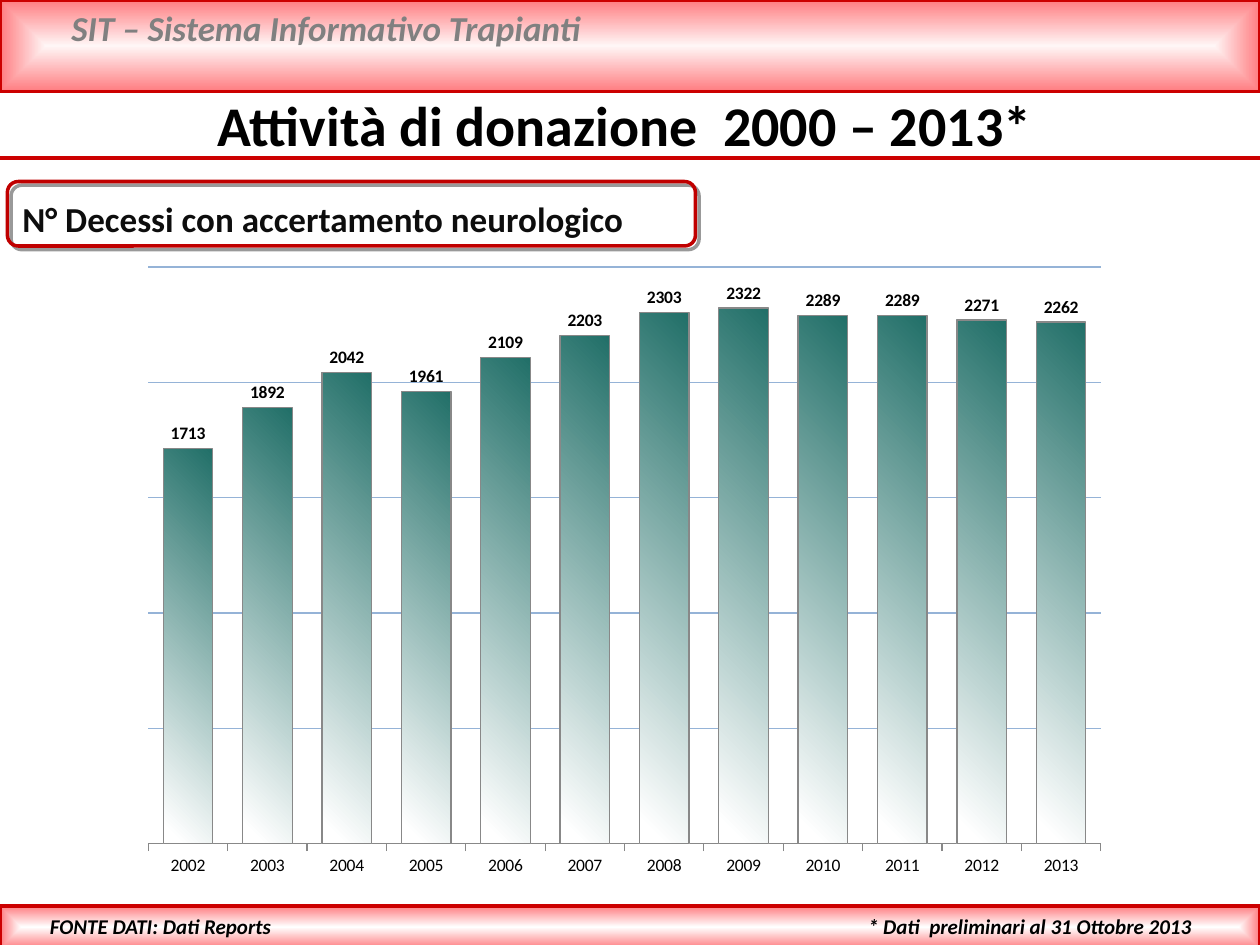
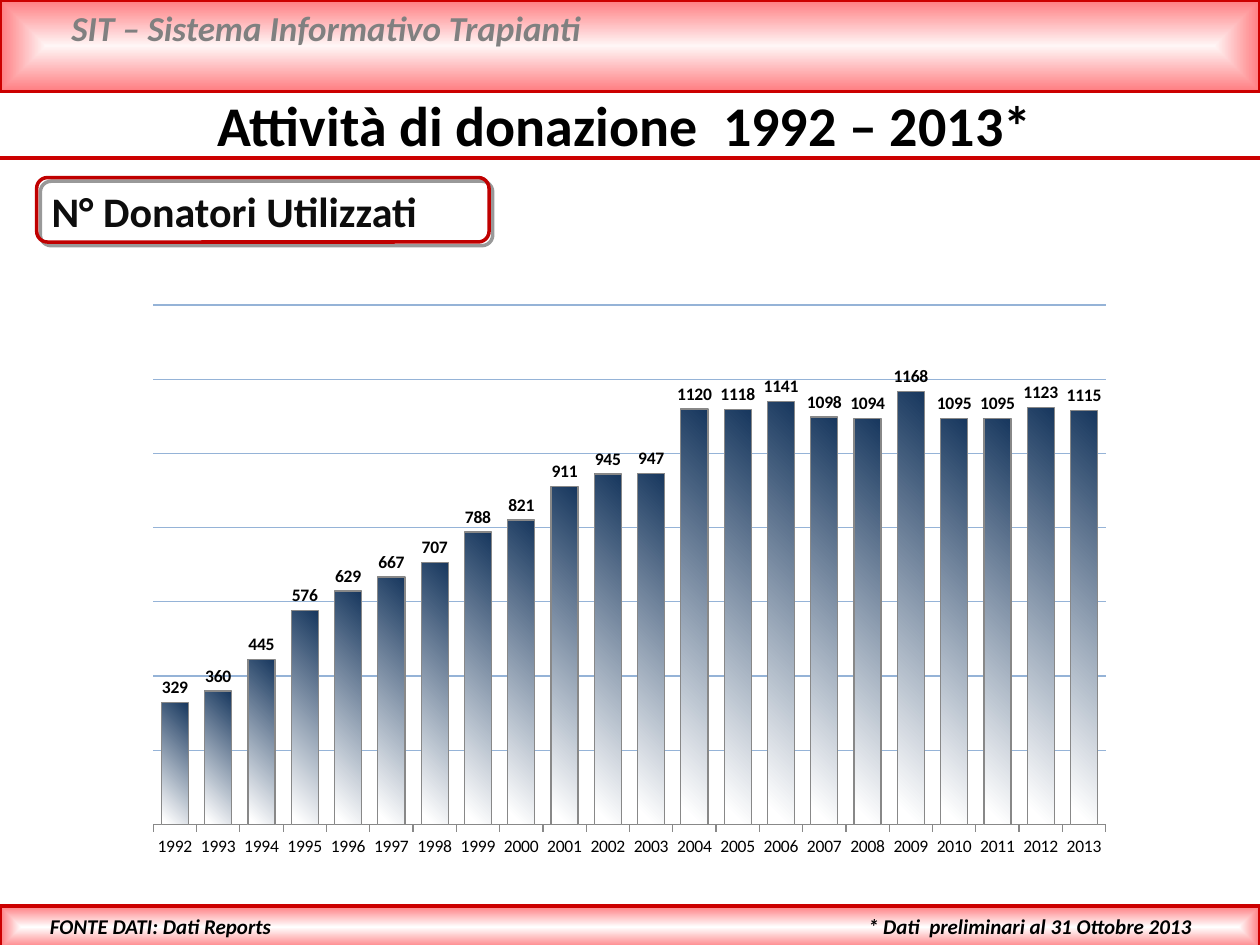
from lxml import etree
from pptx import Presentation
from pptx.chart.data import CategoryChartData
from pptx.dml.color import RGBColor
from pptx.enum.chart import XL_CHART_TYPE, XL_LABEL_POSITION, XL_TICK_LABEL_POSITION, XL_TICK_MARK
from pptx.enum.shapes import MSO_CONNECTOR, MSO_SHAPE
from pptx.enum.text import MSO_ANCHOR, MSO_AUTO_SIZE, PP_ALIGN
from pptx.oxml import parse_xml
from pptx.oxml.ns import qn
from pptx.util import Cm, Pt

COLUMN = XL_CHART_TYPE.COLUMN_CLUSTERED
ABOVE = XL_LABEL_POSITION.OUTSIDE_END
LOW = XL_TICK_LABEL_POSITION.LOW
OUT, NO_TICK = XL_TICK_MARK.OUTSIDE, XL_TICK_MARK.NONE
RECT, ROUND = MSO_SHAPE.RECTANGLE, MSO_SHAPE.ROUNDED_RECTANGLE
STRAIGHT = MSO_CONNECTOR.STRAIGHT
TOP, BOTTOM = MSO_ANCHOR.TOP, MSO_ANCHOR.BOTTOM
LEFT, CENTER, RIGHT = PP_ALIGN.LEFT, PP_ALIGN.CENTER, PP_ALIGN.RIGHT
FIXED = MSO_AUTO_SIZE.NONE

FONT = "Calibri"
BLACK, WHITE, GREY, INK = "000000", "FFFFFF", "808080", "0D0D0D"
RED, FRAME, PINK, PALE = "CC0000", "C00000", "FF7C80", "FFF6F6"
GRID, EDGE = "95B3D7", "888888"
GREEN, NAVY = "216F68", "17375E"
WIDE, HIGH = 25.4, 19.05
A_NS = 'xmlns:a="http://schemas.openxmlformats.org/drawingml/2006/main"'

DEATHS = [1713, 1892, 2042, 1961, 2109, 2203, 2303, 2322, 2289, 2289, 2271, 2262]
DONORS = [329, 360, 445, 576, 629, 667, 707, 788, 821, 911, 945, 947,
          1120, 1118, 1141, 1098, 1094, 1168, 1095, 1095, 1123, 1115]


def color(code):
    return RGBColor.from_string(code)


def place(box):
    return [Cm(side) for side in box]


def stroke(line, code, width):
    line.color.rgb = color(code)
    line.width = Pt(width)


def blend(fill, first, last, end=1.0):
    """Fill with a gradient of two colours, the last one reached at end."""
    fill.gradient()
    for stop, code, spot in zip(fill.gradient_stops, (first, last), (0, end)):
        stop.color.rgb = color(code)
        stop.position = spot


def write(shape, text, size, code=BLACK, align=LEFT, italic=False, anchor=TOP):
    frame = shape.text_frame
    frame.text = text
    frame.word_wrap = True
    frame.auto_size = FIXED
    frame.vertical_anchor = anchor
    frame.margin_left = frame.margin_right = Cm(0.25)
    frame.margin_top = frame.margin_bottom = Cm(0.13)
    para = frame.paragraphs[0]
    para.alignment = align
    font = para.runs[0].font
    font.name, font.size = FONT, Pt(size)
    font.bold, font.italic = True, italic
    font.color.rgb = color(code)


def label(slide, box, text, size, **look):
    write(slide.shapes.add_textbox(*place(box)), text, size, **look)


def band(slide, top, height, core):
    """Full-width bar that shades from its core to pink edges."""
    bar = slide.shapes.add_shape(RECT, *place((0, top, WIDE, height)))
    bar.shadow.inherit = False
    blend(bar.fill, core, PINK)
    grad = bar._element.spPr.find(qn("a:gradFill"))
    grad.replace(grad.find(qn("a:lin")), parse_xml(
        f'<a:path {A_NS} path="shape">'
        '<a:fillToRect l="50000" t="50000" r="50000" b="50000"/></a:path>'))
    stroke(bar.line, RED, 2)


def rule(slide, top):
    line = slide.shapes.add_connector(STRAIGHT, *place((0, top, WIDE, top)))
    stroke(line.line, RED, 2)
    etree.SubElement(line._element.spPr, qn("a:effectLst"))


def plaque(slide, left, top, width, text, size):
    """Rounded outline with a hard shadow around a caption."""
    height = 1.3
    label(slide, (left + 0.05, top, width, height), text, size, code=INK, anchor=BOTTOM)
    frame = slide.shapes.add_shape(ROUND, *place((left, top, width, height)))
    frame.adjustments[0] = 0.167
    frame.fill.background()
    stroke(frame.line, FRAME, 2)
    frame.shadow.inherit = False
    frame._element.spPr.find(qn("a:effectLst")).append(parse_xml(
        f'<a:outerShdw {A_NS} blurRad="0" dist="38100" dir="2700000">'
        '<a:srgbClr val="000000"><a:alpha val="40000"/></a:srgbClr></a:outerShdw>'))


def columns(slide, box, start, values, tint, top, step):
    data = CategoryChartData()
    data.categories = [str(start + i) for i in range(len(values))]
    data.add_series("Series 1", values)
    chart = slide.shapes.add_chart(COLUMN, *place(box), data).chart
    chart.has_legend = chart.has_title = False
    chart.font.name, chart.font.size = FONT, Pt(10)
    chart.font.color.rgb = color(BLACK)

    years = chart.category_axis
    years.major_tick_mark = OUT
    years.tick_label_position = LOW
    years.has_major_gridlines = False
    stroke(years.format.line, EDGE, 0.75)

    scale = chart.value_axis
    scale.visible = False
    scale.major_tick_mark = NO_TICK
    scale.minimum_scale, scale.maximum_scale = 0, top
    scale.major_unit = step
    stroke(scale.major_gridlines.format.line, GRID, 0.75)

    plot = chart.plots[0]
    plot.gap_width, plot.overlap = 60, -20
    plot.vary_by_categories = False
    bars = plot.series[0]
    bars.invert_if_negative = False
    blend(bars.format.fill, tint, WHITE, 0.96)
    bars.format.fill.gradient_angle = 225
    stroke(bars.format.line, EDGE, 0.75)

    plot.has_data_labels = True
    tags = plot.data_labels
    tags.show_value = True
    tags.position = ABOVE
    tags.font.name, tags.font.size, tags.font.bold = FONT, Pt(10), True
    tags.font.color.rgb = color(BLACK)


def page(deck, start):
    """Add a slide with its bands, title and footer."""
    slide = deck.slides.add_slide(deck.slide_layouts[5])
    band(slide, 0, 1.85, PALE)
    label(slide, (1.19, 0, 22.8, 1.12), "SIT – Sistema Informativo Trapianti", 20,
          code=GREY, italic=True)
    band(slide, 18.26, 0.86, WHITE)
    rule(slide, 3.18)
    label(slide, (0.69, 18.29, 5.03, 0.76), "FONTE DATI: Dati Reports", 12,
          align=RIGHT, italic=True)
    label(slide, (17.25, 18.29, 8.15, 0.76), "* Dati  preliminari al 31 Ottobre 2013", 12,
          italic=True)
    title = slide.shapes.title
    title.left, title.top, title.width, title.height = place((0, 1.7, 25.2, 1.63))
    write(title, f"Attività di donazione  {start} – 2013*", 32, align=CENTER)
    return slide


def main():
    deck = Presentation()
    deck.slide_width, deck.slide_height = Cm(WIDE), Cm(HIGH)

    slide = page(deck, 2000)
    plaque(slide, 0.15, 3.66, 13.87, "N° Decessi con accertamento neurologico", 20)
    columns(slide, (2.59, 5.13, 20, 12.78), 2002, DEATHS, GREEN, 2500, 500)

    slide = page(deck, 1992)
    plaque(slide, 0.74, 3.58, 9.12, "N° Donatori Utilizzati", 24)
    columns(slide, (2.69, 5.92, 20, 11.58), 1992, DONORS, NAVY, 1400, 200)

    deck.save("out.pptx")


if __name__ == "__main__":
    main()
